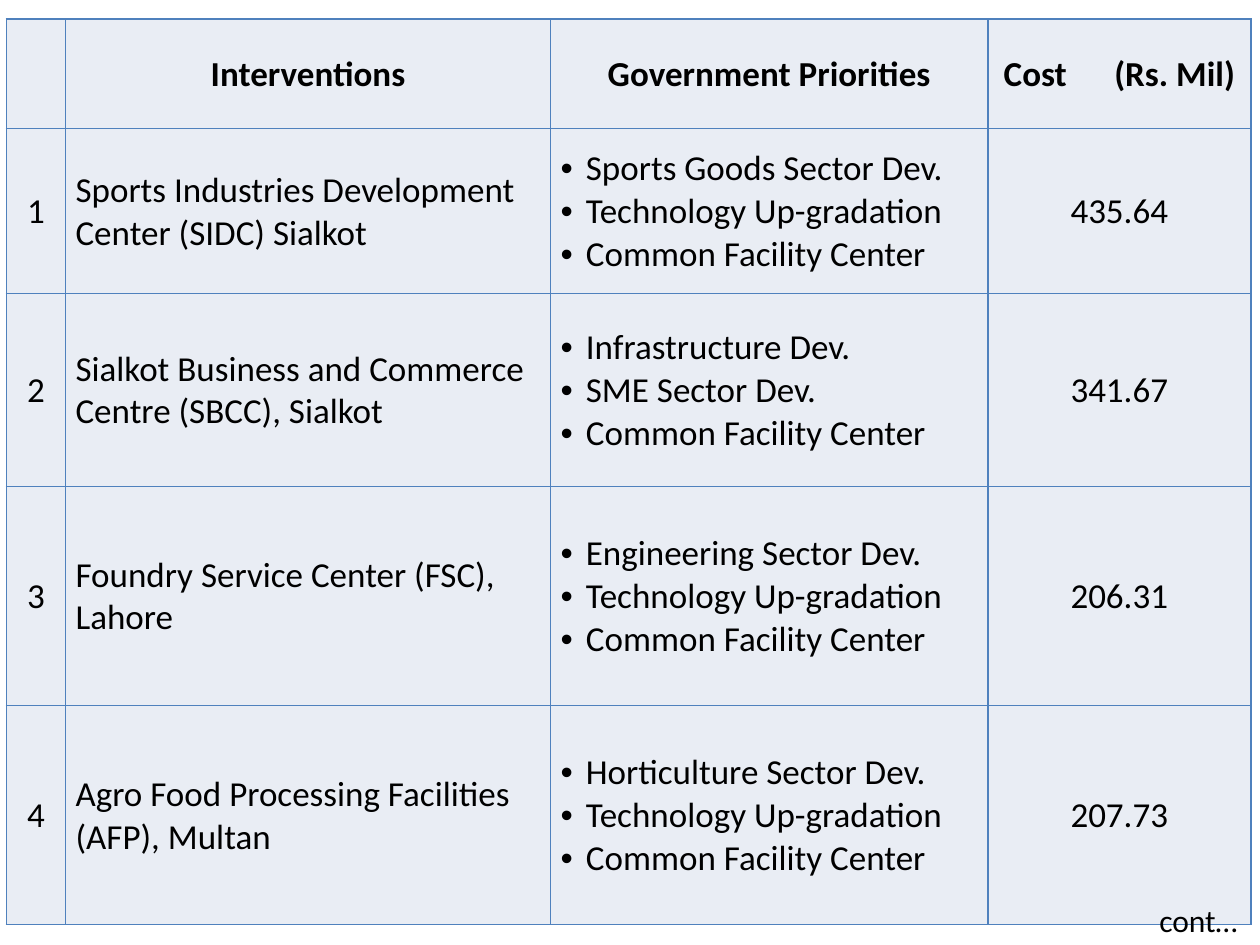
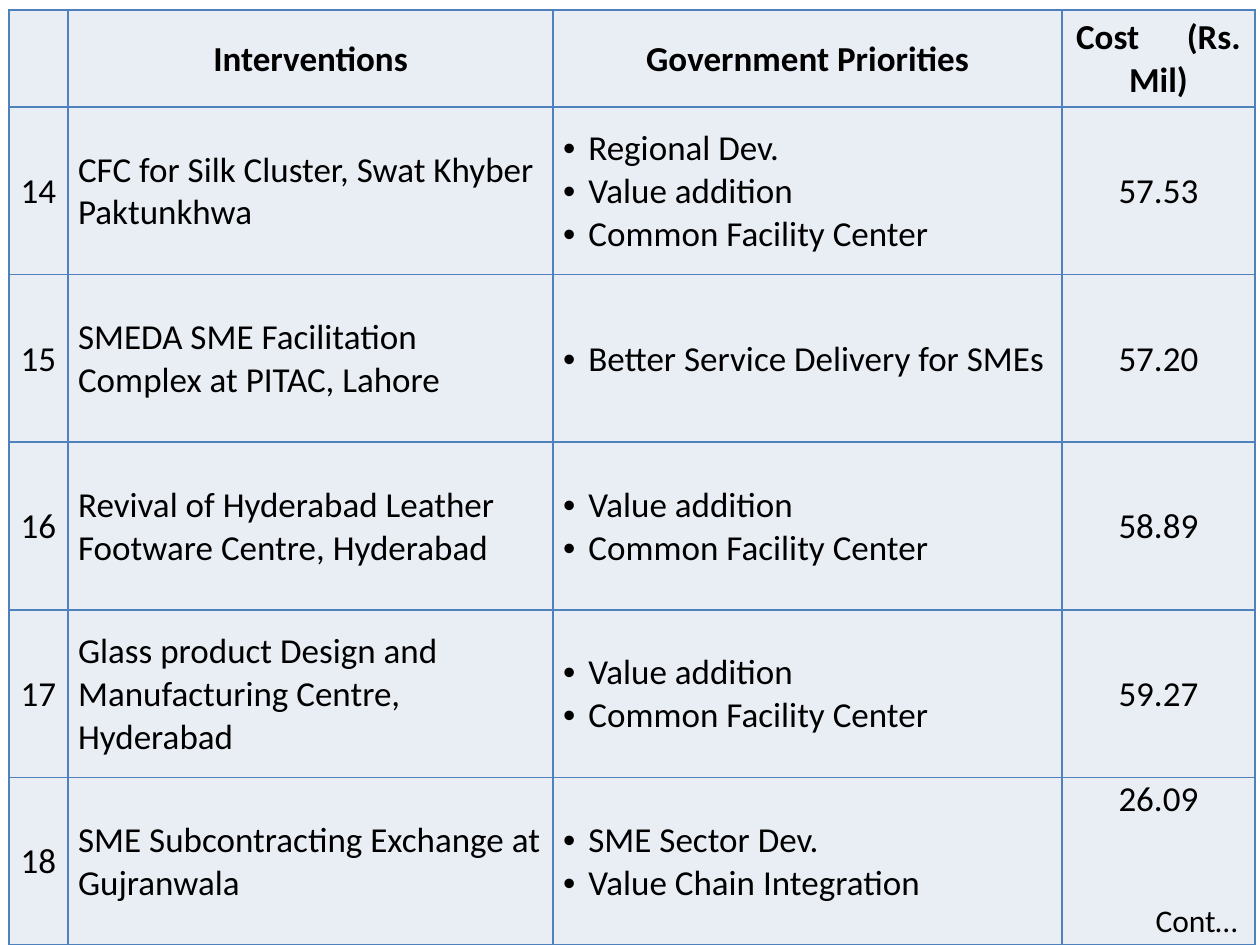
"""Builds two table slides listing interventions, government priorities and costs."""
from lxml import etree
from pptx import Presentation, util as u
from pptx.dml.color import RGBColor
from pptx.enum import text
from pptx.oxml.ns import qn

CFC = "Common Facility Center"
TECH = "Technology Up-gradation"
VALUE = "Value addition"
HEADER = ("", "Interventions", "Government Priorities", ("Cost", " ", "(Rs. Mil)"))

SLIDES = [
    {
        "at": (0.05, 0.15),
        "cols": (0.47, 3.85, 3.47, 2.09),
        "rows": (0.87, 1.31, 1.53, 1.74, 1.74),
        "items": [
            ("1", "Sports Industries Development Center (SIDC) Sialkot",
             ["Sports Goods Sector Dev.", TECH, CFC], "435.64"),
            ("2", "Sialkot Business and Commerce Centre (SBCC), Sialkot",
             ["Infrastructure Dev.", "SME Sector Dev.", CFC], "341.67"),
            ("3", "Foundry Service Center (FSC), Lahore",
             ["Engineering Sector Dev.", TECH, CFC], "206.31"),
            ("4", "Agro Food Processing Facilities (AFP), Multan",
             ["Horticulture Sector Dev.", TECH, CFC], "207.73"),
        ],
        "top_cells": (),
        "footer": "cont…",
    },
    {
        "at": (0.07, 0.08),
        "cols": (0.47, 3.85, 4.04, 1.53),
        "rows": (0.77,) + (1.33,) * 5,
        "items": [
            ("14", "CFC for Silk Cluster, Swat Khyber Paktunkhwa",
             ["Regional Dev.", VALUE, CFC], "57.53"),
            ("15", "SMEDA SME Facilitation Complex at PITAC, Lahore",
             ["Better Service Delivery for SMEs"], "57.20"),
            ("16", "Revival of Hyderabad Leather Footware Centre, Hyderabad",
             [VALUE, CFC], "58.89"),
            ("17", "Glass product Design and Manufacturing Centre, Hyderabad",
             [VALUE, CFC], "59.27"),
            ("18", "SME Subcontracting Exchange at Gujranwala",
             ["SME Sector Dev.", "Value Chain Integration"], "26.09"),
        ],
        "top_cells": ((5, 3),),
        "footer": "Cont…",
    },
]

THEME = {
    "font": "Calibri",
    "ink": RGBColor.from_string("000000"),
    "fill": RGBColor.from_string("E9EDF4"),
    "border": "4F81BD",
    "border_width": u.Pt(1),
    "table_size": u.Pt(20),
    "footer_size": u.Pt(18),
    "header_gap": 2260,
    "bullet_indent": u.Inches(0.2),
}
CELL = {
    "margin_left": u.Inches(0.08),
    "margin_right": u.Inches(0.08),
    "margin_top": u.Inches(0.01),
    "margin_bottom": 0,
}
FOOTER_BOX = (8.58, 7.1, 1.34, 0.4)
ALIGN = text.PP_ALIGN
ANCHOR = text.MSO_ANCHOR


def set_all(obj, values):
    """Set each named attribute."""
    for name, value in values.items():
        setattr(obj, name, value)


def add_run(p, words, size, bold=False):
    """Add one formatted run to a paragraph."""
    r = p.add_run()
    r.text = words
    set_all(r.font, {"name": THEME["font"], "size": size, "bold": bold})
    r.font.color.rgb = THEME["ink"]
    return r


def add_bullet(p):
    """Give a paragraph a hanging round bullet."""
    pPr = p._p.get_or_add_pPr()
    pPr.set("marL", str(THEME["bullet_indent"]))
    pPr.set("indent", str(-THEME["bullet_indent"]))
    etree.SubElement(pPr, qn("a:buFont")).set("typeface", "Arial")
    etree.SubElement(pPr, qn("a:buChar")).set("char", "•")


def add_borders(cell):
    """Draw a line on all four sides of a cell."""
    tcPr = cell._tc.get_or_add_tcPr()
    for i, side in enumerate("LRTB"):
        ln = etree.Element(qn(f"a:ln{side}"), w=str(THEME["border_width"]))
        fill = etree.SubElement(ln, qn("a:solidFill"))
        etree.SubElement(fill, qn("a:srgbClr")).set("val", THEME["border"])
        tcPr.insert(i, ln)


def fill_cell(cell, content, align, bold, anchor):
    """Format a cell and write a string, a bullet list or a tuple of header parts."""
    set_all(cell, {**CELL, "vertical_anchor": anchor})
    cell.fill.solid()
    cell.fill.fore_color.rgb = THEME["fill"]
    add_borders(cell)
    tf = cell.text_frame
    lines = content if isinstance(content, list) else [content]
    for i, line in enumerate(lines):
        p = tf.add_paragraph() if i else tf.paragraphs[0]
        p.alignment = align
        if isinstance(content, list):
            add_bullet(p)
        for part in line if isinstance(line, tuple) else (line,):
            if not part:
                continue
            r = add_run(p, part, THEME["table_size"], bold)
            if part == " ":
                r.font._element.set("spc", str(THEME["header_gap"]))


def add_priorities_table(s, data):
    """Add the bordered table of interventions."""
    cols, rows = data["cols"], data["rows"]
    box = (*data["at"], sum(cols), sum(rows))
    table = s.shapes.add_table(len(rows), len(cols), *map(u.Inches, box)).table
    set_all(table, {"first_row": False, "horz_banding": False})
    for col, width in zip(table.columns, cols):
        col.width = u.Inches(width)
    for row, height in zip(table.rows, rows):
        row.height = u.Inches(height)
    for i, values in enumerate([HEADER, *data["items"]]):
        for j, content in enumerate(values):
            align = ALIGN.LEFT if i and j in (1, 2) else ALIGN.CENTER
            anchor = ANCHOR.TOP if (i, j) in data["top_cells"] else ANCHOR.MIDDLE
            fill_cell(table.cell(i, j), content, align, i == 0, anchor)


def add_footer(s, words):
    """Add the continuation note at the lower right."""
    tf = s.shapes.add_textbox(*map(u.Inches, FOOTER_BOX)).text_frame
    set_all(tf, {"word_wrap": True, "auto_size": text.MSO_AUTO_SIZE.SHAPE_TO_FIT_TEXT})
    p = tf.paragraphs[0]
    p.alignment = ALIGN.RIGHT
    add_run(p, words, THEME["footer_size"])


def main():
    """Build and save the presentation."""
    prs = Presentation()
    set_all(prs, {"slide_width": u.Inches(10), "slide_height": u.Inches(7.5)})
    for data in SLIDES:
        s = prs.slides.add_slide(prs.slide_layouts[6])
        add_priorities_table(s, data)
        add_footer(s, data["footer"])
    prs.save("out.pptx")


if __name__ == "__main__":
    main()
